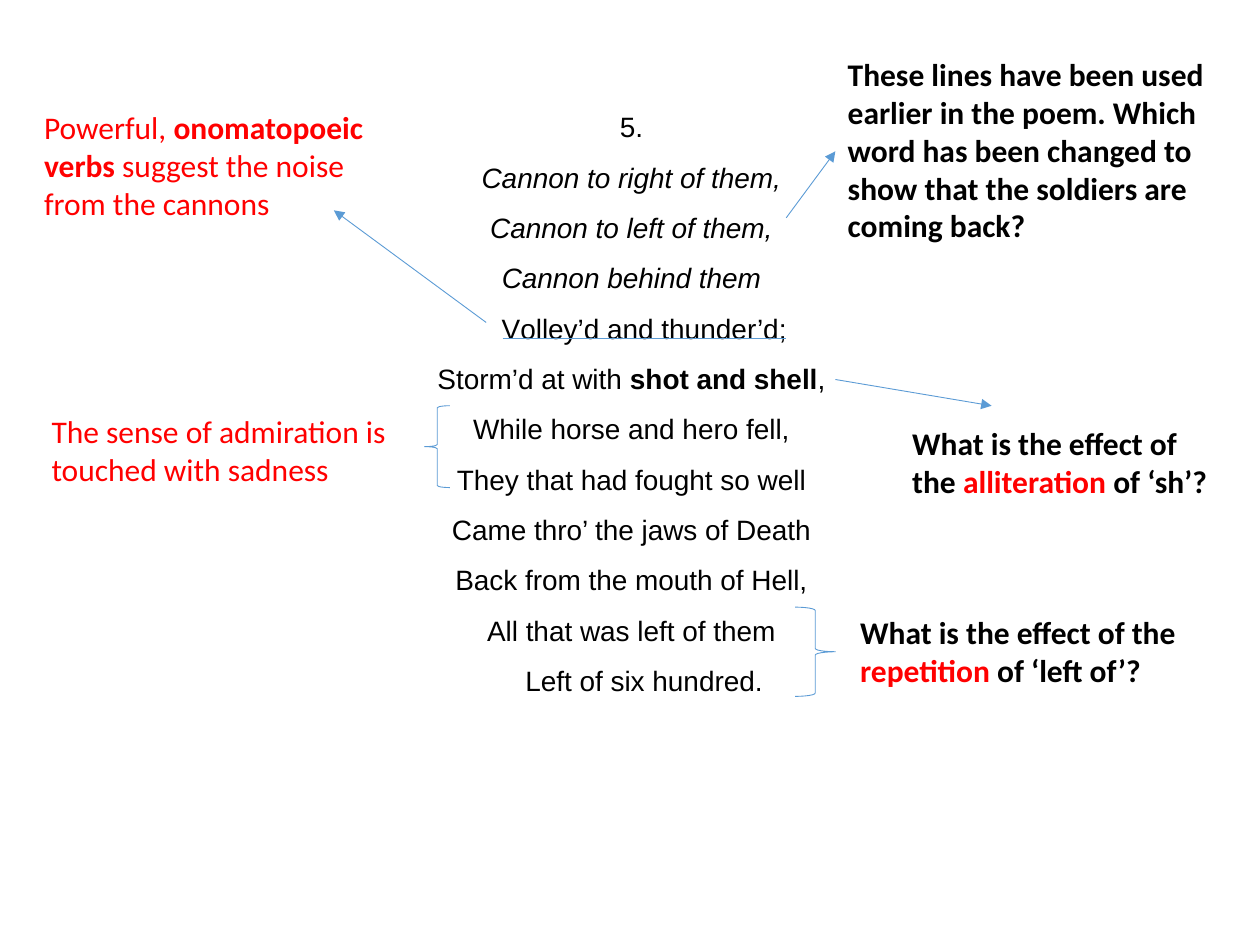
from lxml import etree
from pptx import Presentation
from pptx.dml.color import RGBColor
from pptx.enum.shapes import MSO_CONNECTOR, MSO_SHAPE
from pptx.enum.text import MSO_AUTO_SIZE, PP_ALIGN
from pptx.oxml.ns import qn
from pptx.util import Cm, Pt

LINE = MSO_CONNECTOR.STRAIGHT
LEFT = MSO_SHAPE.LEFT_BRACE
RIGHT = MSO_SHAPE.RIGHT_BRACE
FIT = MSO_AUTO_SIZE.SHAPE_TO_FIT_TEXT
CENTER = PP_ALIGN.CENTER
COLORS = {"black": "000000", "red": "FF0000", "blue": "5B9BD5"}
INDENT = Cm(0.51)

# Each verse is (indented, runs); each run is (text, style, spacing in 1/100 pt).
POEM = [
    (False, [("5.", "", 0)]),
    (False, [("Cannon to right of them,", "i", 0)]),
    (False, [("Cannon to left of them,", "i", 0)]),
    (False, [("Cannon behind them", "i", 0)]),
    (True, [("V", "", -60), ("olley’d and thunde", "", 0),
            ("r", "", 40), ("’d;", "", 0)]),
    (False, [("Storm’d at with ", "", 0), ("shot and shell", "b", 0),
             (",", "", 0)]),
    (False, [("While horse and hero fell,", "", 0)]),
    (False, [("They that had fought so well", "", 0)]),
    (False, [("Came thro’ the jaws of Death", "", 0)]),
    (False, [("Back from the mouth of Hell,", "", 0)]),
    (False, [("All that was left of them", "", 0)]),
    (True, [("Left of six hundred.", "", 0)]),
]

# Each note is (box in cm, runs); each run is (text, style, color).
NOTES = [
    ((16.84, 0.99, 8.13, 4.11), [
        ("These lines have been used earlier in the poem. Which word has been "
         "changed to show that the soldiers are coming back?", "b", "black")]),
    ((18.14, 8.43, 6.65, 1.8), [
        ("What is the effect of the ", "b", "black"),
        ("alliteration", "b", "red"), (" of ‘sh’?", "b", "black")]),
    ((0.64, 2.06, 7.21, 2.57), [
        ("Powerful, ", "", "red"), ("onomatopoeic verbs", "b", "red"),
        (" suggest the noise from the cannons", "", "red")]),
    ((17.09, 12.24, 8.1, 1.8), [
        ("What is the effect of the ", "b", "black"),
        ("repetition", "b", "red"), (" of ‘left of’?", "b", "black")]),
    ((0.79, 8.18, 7.37, 1.8), [
        ("The sense of admiration is touched with sadness", "", "red")]),
]

ARROWS = [
    (15.85, 4.39, 16.84, 3.05),
    (16.84, 7.65, 19.99, 8.18),
    (9.8, 6.5, 6.73, 4.24),
]
UNDERLINE = (10.13, 6.83, 15.85, 6.83)

BRACES = [
    (RIGHT, (16.03, 12.24, 0.81, 1.8)),
    (LEFT, (8.56, 8.18, 0.51, 1.65)),
]


def cms(values):
    return [Cm(v) for v in values]


def rgb(name):
    return RGBColor.from_string(COLORS[name])


def add_box(slide, box):
    frame = slide.shapes.add_textbox(*cms(box)).text_frame
    frame.word_wrap = True
    frame.auto_size = FIT
    return frame


def add_run(para, text, style, face, size, color):
    run = para.add_run()
    run.text = text
    font = run.font
    font.name = face
    font.size = Pt(size)
    font.bold = "b" in style
    font.italic = "i" in style
    font.color.rgb = rgb(color)
    return run


def add_poem(slide):
    frame = add_box(slide, (6.38, 1.75, 12.7, 12.83))
    for i, (indent, runs) in enumerate(POEM):
        para = frame.add_paragraph() if i else frame.paragraphs[0]
        para.alignment = CENTER
        para.line_spacing = 1.5
        if indent:
            para._p.get_or_add_pPr().set("marL", str(INDENT))
        for text, style, gap in runs:
            run = add_run(para, text, style, "Arial", 16, "black")
            if gap:
                run._r.get_or_add_rPr().set("spc", str(gap))


def add_note(slide, box, runs):
    para = add_box(slide, box).paragraphs[0]
    for text, style, color in runs:
        add_run(para, text, style, "Calibri", 18, color)


def set_line(line):
    line.color.rgb = rgb("blue")
    line.width = Pt(0.5)


def add_line(slide, ends, arrow=False):
    link = slide.shapes.add_connector(LINE, *cms(ends))
    set_line(link.line)
    if arrow:
        stroke = link.line._get_or_add_ln()
        etree.SubElement(stroke, qn("a:tailEnd"), type="triangle")
    etree.SubElement(link._element.spPr, qn("a:effectLst"))


def add_brace(slide, kind, box):
    brace = slide.shapes.add_shape(kind, *cms(box))
    brace.shadow.inherit = False
    brace.fill.background()
    set_line(brace.line)


def main():
    deck = Presentation()
    deck.slide_width, deck.slide_height = Cm(25.4), Cm(19.05)
    slide = deck.slides.add_slide(deck.slide_layouts[6])
    add_poem(slide)
    for box, runs in NOTES:
        add_note(slide, box, runs)
    for ends in ARROWS:
        add_line(slide, ends, arrow=True)
    add_line(slide, UNDERLINE)
    for kind, box in BRACES:
        add_brace(slide, kind, box)
    deck.save("out.pptx")


if __name__ == "__main__":
    main()
